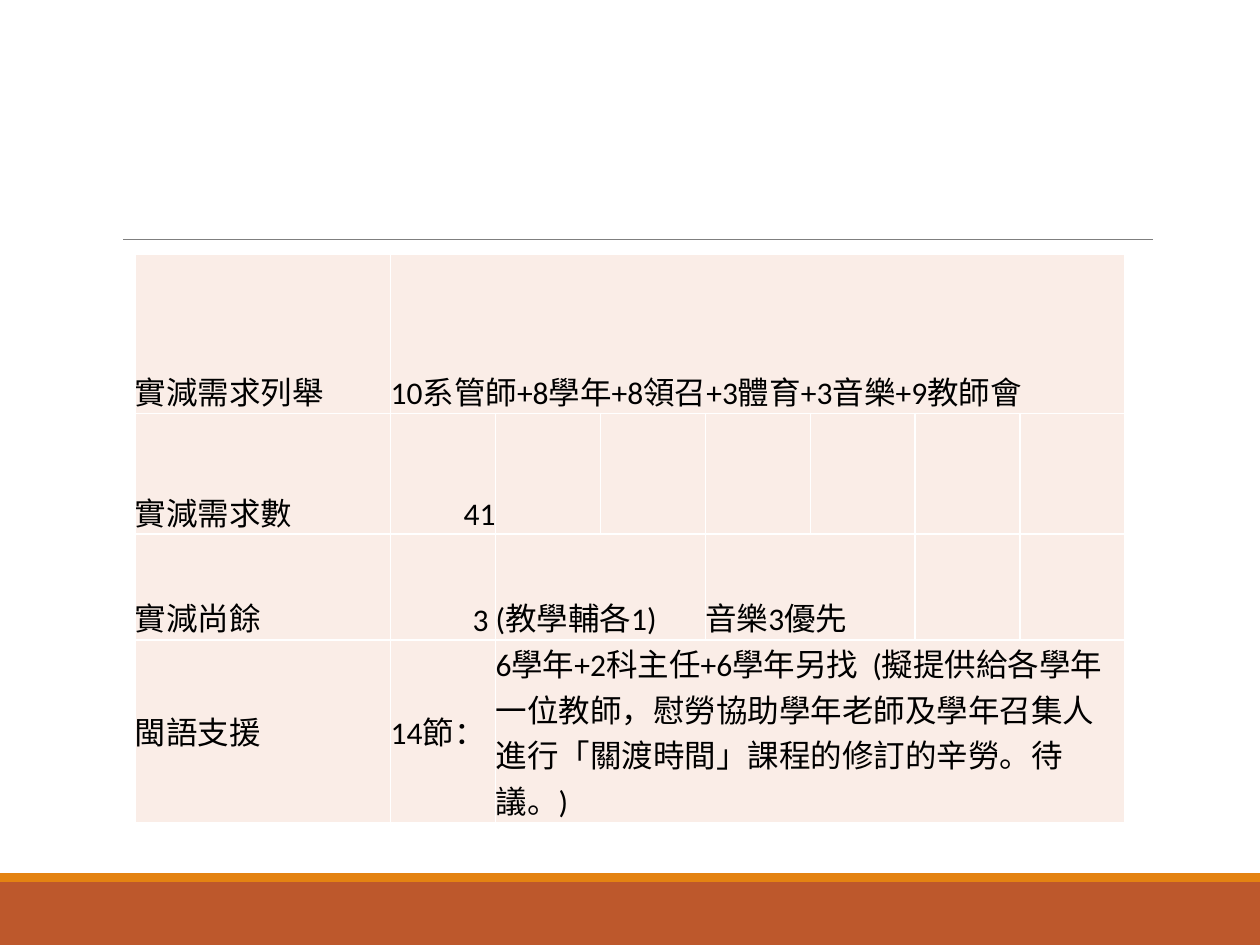
from dataclasses import dataclass

from lxml.etree import SubElement
from pptx import Presentation
from pptx.dml.color import RGBColor
from pptx.enum.shapes import MSO_CONNECTOR, MSO_SHAPE
from pptx.enum.text import MSO_ANCHOR, PP_ALIGN
from pptx.oxml.ns import qn
from pptx.util import Inches, Pt

WIDTH, HEIGHT = 10, 7.5
COLUMNS = [2.03] + [0.833] * 7
ROWS = [1.26, 0.96, 0.84, 1.43]
CELL_FORMAT = {"margin_left": 0, "margin_right": 0, "margin_top": 0, "margin_bottom": 0}
FONT_FORMAT = {"name": "Calibri", "size": Pt(18), "bold": False}


@dataclass
class Band:
    """A full-width footer band, placed as shares of the slide height."""
    top: float
    height: float
    color: str


@dataclass
class Entry:
    """The text of a table cell and the columns it covers."""
    row: int
    column: int
    text: str
    span: int = 1
    align: PP_ALIGN = PP_ALIGN.LEFT


BANDS = [Band(7 / HEIGHT, 0.5 / HEIGHT, "BD582C"), Band(6.93 / HEIGHT, 0.07 / HEIGHT, "E48312")]
ENTRIES = [
    Entry(0, 0, "實減需求列舉"),
    Entry(0, 1, "10系管師+8學年+8領召+3體育+3音樂+9教師會", 7),
    Entry(1, 0, "實減需求數"),
    Entry(1, 1, "41", align=PP_ALIGN.RIGHT),
    Entry(2, 0, "實減尚餘"),
    Entry(2, 1, "3 ", align=PP_ALIGN.RIGHT),
    Entry(2, 2, "(教學輔各1)", 2),
    Entry(2, 4, "音樂3優先", 2),
    Entry(3, 0, "閩語支援"),
    Entry(3, 1, "14節："),
    Entry(3, 2, "6學年+2科主任+6學年另找  (擬提供給各學年一位教師，慰勞協助學年老師及學年召集人"
                "進行「關渡時間」課程的修訂的辛勞。待議。)", 6),
]


def color(value: str) -> RGBColor:
    """Turn a hex string into a colour."""
    return RGBColor.from_string(value)


def apply(target: object, values: dict) -> None:
    """Set every attribute named in a dict of format values."""
    for name, value in values.items():
        setattr(target, name, value)


def draw_band(slide, band: Band) -> None:
    """Draw one footer band."""
    shape = slide.shapes.add_shape(MSO_SHAPE.RECTANGLE, 0, Inches(band.top * HEIGHT),
                                   Inches(WIDTH), Inches(band.height * HEIGHT))
    shape.shadow.inherit = False
    shape.fill.solid()
    shape.fill.fore_color.rgb = color(band.color)
    shape.line.fill.background()


def draw_rule(slide) -> None:
    """Draw the thin rule above the table."""
    rule = slide.shapes.add_connector(MSO_CONNECTOR.STRAIGHT, Inches(0.98), Inches(1.9),
                                      Inches(9.15), Inches(1.9))
    rule.line.color.rgb = color("7F7F7F")
    rule.line.width = Pt(0.75)
    SubElement(rule._element.spPr, qn("a:effectLst"))


def format_cell(cell, row: int) -> None:
    """Give a cell its white borders, tint, margins and anchor."""
    properties = cell._tc.get_or_add_tcPr()
    for side in ("a:lnL", "a:lnR", "a:lnT", "a:lnB"):
        border = SubElement(properties, qn(side), w=str(Pt(1)))
        SubElement(SubElement(border, qn("a:solidFill")), qn("a:srgbClr"), val="FFFFFF")
    cell.fill.solid()
    cell.fill.fore_color.rgb = color("FAEDE7")
    anchor = MSO_ANCHOR.MIDDLE if row == len(ROWS) - 1 else MSO_ANCHOR.BOTTOM
    apply(cell, {**CELL_FORMAT, "vertical_anchor": anchor})


def fill_entry(table, entry: Entry) -> None:
    """Write an entry into its cell and merge the columns it covers."""
    cell = table.cell(entry.row, entry.column)
    if entry.span > 1:
        cell.merge(table.cell(entry.row, entry.column + entry.span - 1))
    paragraph = cell.text_frame.paragraphs[0]
    paragraph.alignment = entry.align
    run = paragraph.add_run()
    run.text = entry.text
    apply(run.font, FONT_FORMAT)
    run.font.color.rgb = color("000000")


def draw_table(slide) -> None:
    """Draw the table of lesson reductions."""
    table = slide.shapes.add_table(len(ROWS), len(COLUMNS), Inches(1.07), Inches(2.02),
                                   Inches(sum(COLUMNS)), Inches(sum(ROWS))).table
    apply(table, {"first_row": False, "horz_banding": False})
    for column, width in zip(table.columns, COLUMNS):
        column.width = Inches(width)
    for index, height in enumerate(ROWS):
        table.rows[index].height = Inches(height)
        for cell in table.rows[index].cells:
            format_cell(cell, index)
    for entry in ENTRIES:
        fill_entry(table, entry)


def main() -> None:
    """Build and save the slide."""
    presentation = Presentation()
    apply(presentation, {"slide_width": Inches(WIDTH), "slide_height": Inches(HEIGHT)})
    slide = presentation.slides.add_slide(presentation.slide_layouts[6])
    for band in BANDS:
        draw_band(slide, band)
    draw_rule(slide)
    draw_table(slide)
    presentation.save("out.pptx")


if __name__ == "__main__":
    main()
